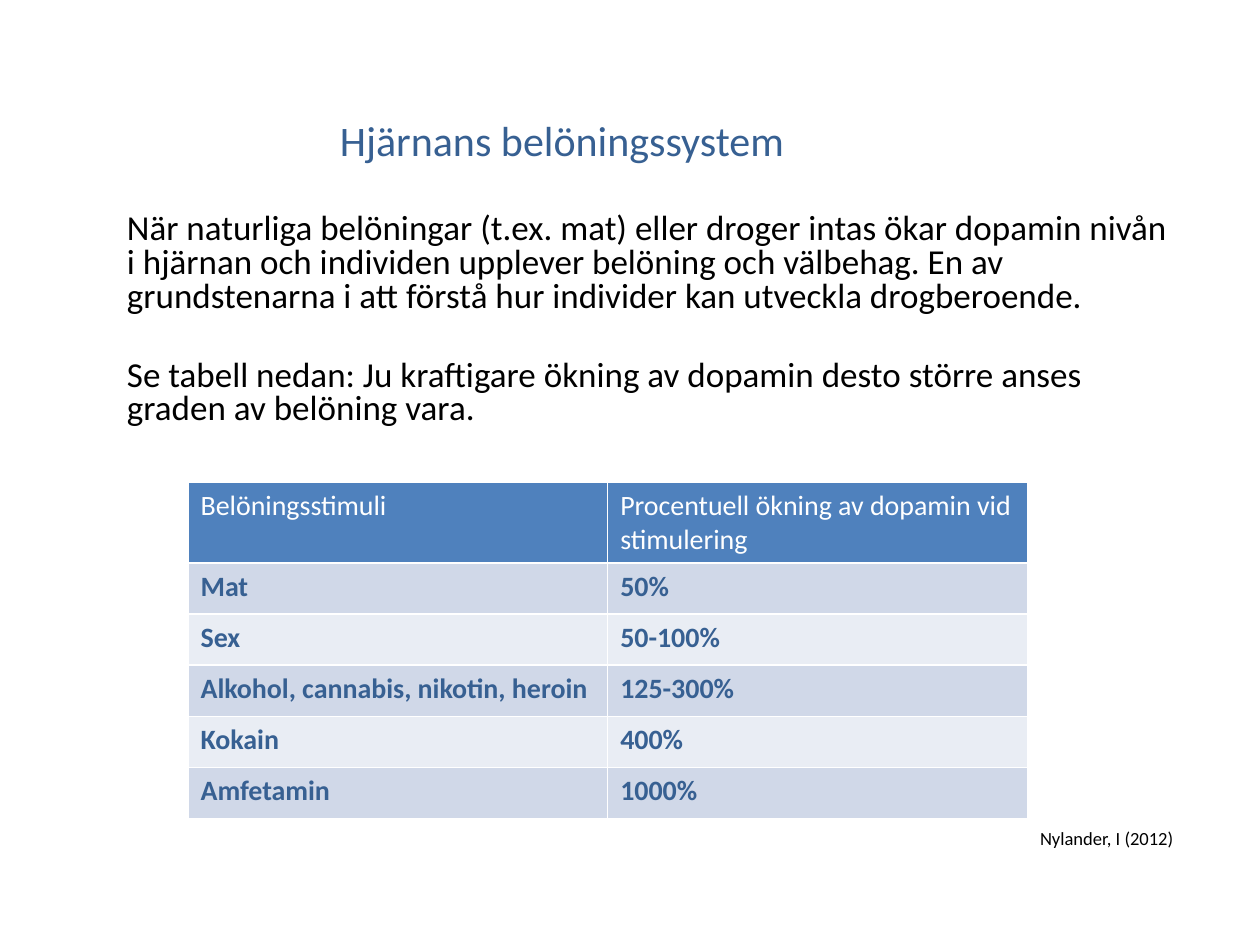
"""Build the slide on the brain's reward system with its dopamine table."""
from pptx import Presentation
from pptx.dml.color import RGBColor
from pptx.enum.text import MSO_ANCHOR, PP_ALIGN
from pptx.util import Cm, Pt

COLORS = {
    "heading": "376092", "text": "000000", "white": "FFFFFF",
    "header": "4F81BD", "band": "D0D8E8", "light": "E9EDF4",
}
BOXES = [
    {
        "at": (2.02, 1.45, 18.62, 2.74), "anchor": MSO_ANCHOR.MIDDLE,
        "size": 24, "color": "heading",
        "texts": [("Hjärnans belöningssystem", {"alignment": PP_ALIGN.CENTER})],
    },
    {
        "at": (2.31, 4.19, 21.59, 7.2), "anchor": MSO_ANCHOR.TOP,
        "size": 20, "color": "text",
        "texts": [
            ("När naturliga belöningar (t.ex. mat) eller droger intas ökar "
             "dopamin nivån i hjärnan och individen upplever belöning och "
             "välbehag. En av grundstenarna i att förstå hur individer kan "
             "utveckla drogberoende.",
             {"line_spacing": 0.8, "space_before": Pt(3.5)}),
            ("Se tabell nedan: Ju kraftigare ökning av dopamin desto större "
             "anses graden av belöning vara.",
             {"line_spacing": 0.8, "space_before": Pt(26)}),
        ],
    },
    {
        "at": (18.9, 16.5, 5, 0.8), "anchor": MSO_ANCHOR.MIDDLE,
        "size": 10.6, "color": "text",
        "texts": [("Nylander, I (2012)", {"alignment": PP_ALIGN.RIGHT})],
    },
]
ROWS = [
    ("Belöningsstimuli", "Procentuell ökning av dopamin vid stimulering"),
    ("Mat", "50%"),
    ("Sex", "50-100%"),
    ("Alkohol, cannabis, nikotin, heroin", "125-300%"),
    ("Kokain", "400%"),
    ("Amfetamin", "1000%"),
]
TABLE_LEFT, TABLE_TOP, COL_WIDTH = 3.79, 9.73, 8.46
HEADER_HEIGHT, ROW_HEIGHT = 1.62, 1.03


def rgb(name):
    return RGBColor.from_string(COLORS[name])


def add_text(p, text, size, color, bold=False):
    r = p.add_run()
    r.text = text
    for key, value in {"name": "Calibri", "size": Pt(size), "bold": bold}.items():
        setattr(r.font, key, value)
    r.font.color.rgb = rgb(color)


def add_box(s, box):
    tf = s.shapes.add_textbox(*map(Cm, box["at"])).text_frame
    tf.word_wrap = True
    tf.vertical_anchor = box["anchor"]
    for i, (text, fmt) in enumerate(box["texts"]):
        p = tf.add_paragraph() if i else tf.paragraphs[0]
        for key, value in fmt.items():
            setattr(p, key, value)
        add_text(p, text, box["size"], box["color"])


def add_stimuli_table(s):
    heights = [HEADER_HEIGHT] + [ROW_HEIGHT] * (len(ROWS) - 1)
    cols = len(ROWS[0])
    table = s.shapes.add_table(
        len(ROWS), cols, Cm(TABLE_LEFT), Cm(TABLE_TOP),
        Cm(COL_WIDTH * cols), Cm(sum(heights))).table
    for col in table.columns:
        col.width = Cm(COL_WIDTH)
    for i, (row, height) in enumerate(zip(ROWS, heights)):
        table.rows[i].height = Cm(height)
        fill = "header" if i == 0 else "band" if i % 2 else "light"
        color = "heading" if i else "white"
        for j, text in enumerate(row):
            cell = table.cell(i, j)
            cell.fill.solid()
            cell.fill.fore_color.rgb = rgb(fill)
            add_text(cell.text_frame.paragraphs[0], text, 16, color, i > 0)


def main():
    prs = Presentation()
    prs.slide_width, prs.slide_height = Cm(25.4), Cm(19.05)
    s = prs.slides.add_slide(prs.slide_layouts[6])
    for box in BOXES:
        add_box(s, box)
    add_stimuli_table(s)
    prs.save("out.pptx")


if __name__ == "__main__":
    main()
